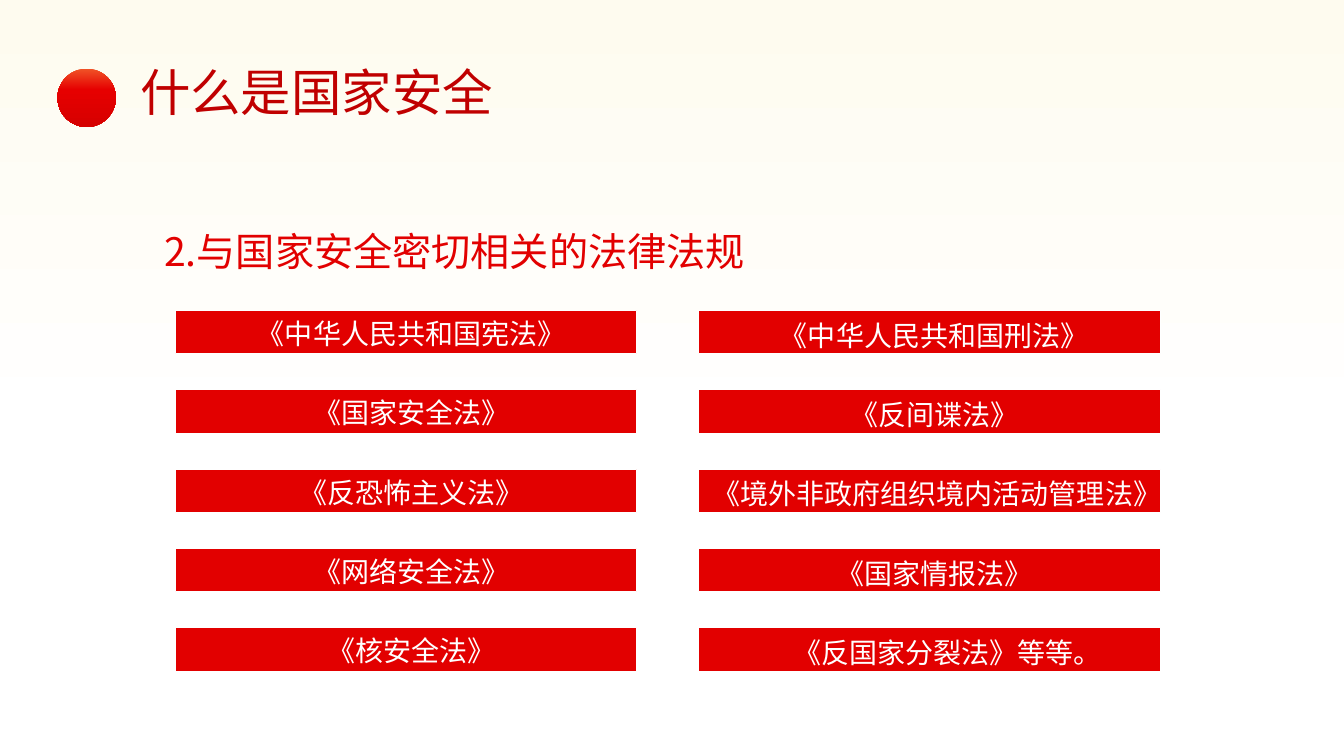
import copy

import pptx
import pptx.dml.color
import pptx.enum.shapes
import pptx.enum.text
import pptx.oxml
import pptx.oxml.ns
import pptx.util
from pptx.util import Cm, Pt

SHAPE = pptx.enum.shapes.MSO_SHAPE
ALIGN = pptx.enum.text.PP_ALIGN
qn = pptx.oxml.ns.qn


def rgb(value):
    return pptx.dml.color.RGBColor.from_string(value)


class Deck:
    font = "Noto Sans CJK SC"
    red, dark_red, white = "E20000", "C00000", "FFFFFF"

    def __init__(self):
        self.prs = pptx.Presentation()
        self.prs.slide_width, self.prs.slide_height = Cm(33.87), Cm(19.05)
        self.s = self.prs.slides.add_slide(self.prs.slide_layouts[6])

    def shape(self, kind, left, top, width, height):
        sp = self.s.shapes.add_shape(kind, Cm(left), Cm(top), Cm(width), Cm(height))
        sp.shadow.inherit = False
        return sp

    def gradient(self, kind, left, top, width, height, stops):
        """Shape shaded from top to bottom; stops are (position, colour)."""
        sp = self.shape(kind, left, top, width, height)
        sp.line.fill.background()
        sp.fill.gradient()
        sp.fill.gradient_angle = 270
        gs_list = sp._element.spPr.find(".//" + qn("a:gsLst"))
        while len(gs_list) < len(stops):
            gs_list.append(copy.deepcopy(gs_list[0]))
        for stop, (position, color) in zip(sp.fill.gradient_stops, stops):
            stop.position = position
            stop.color.rgb = rgb(color)

    def bar(self, left, top, width, height):
        sp = self.shape(SHAPE.RECTANGLE, left, top, width, height)
        sp.fill.solid()
        sp.fill.fore_color.rgb = rgb(self.red)
        sp.line.color.rgb = rgb(self.white)
        sp.line.width = Pt(0.5)

    def text(self, words, left, top, width, height, size, color,
             align=ALIGN.JUSTIFY, spacing=None, inset=(0.25, 0.13)):
        tb = self.s.shapes.add_textbox(Cm(left), Cm(top), Cm(width), Cm(height))
        tf = tb.text_frame
        tf.word_wrap = True
        tf.margin_left = tf.margin_right = Cm(inset[0])
        tf.margin_top = tf.margin_bottom = Cm(inset[1])
        p = tf.paragraphs[0]
        p.text = words
        p.alignment = align
        if spacing:
            p.line_spacing = Pt(spacing)
        p.font.size = Pt(size)
        p.font.color.rgb = rgb(color)
        p.font.name = self.font
        # East Asian typeface
        latin = p._p.find(".//" + qn("a:latin"))
        ea = pptx.oxml.parse_xml(
            f'<a:ea {pptx.oxml.ns.nsdecls("a")} typeface="{self.font}"/>')
        latin.addnext(ea)


# Bar columns: bar left, label top offset, rows of (law, label left, label width)
LABEL_WIDTH = 10.77
COLUMNS = [
    (4.42, -0.1, [
        ("《中华人民共和国宪法》", 4.98, LABEL_WIDTH),
        ("《国家安全法》", 4.98, LABEL_WIDTH),
        ("《反恐怖主义法》", 4.98, LABEL_WIDTH),
        ("《网络安全法》", 4.98, LABEL_WIDTH),
        ("《核安全法》", 4.98, LABEL_WIDTH),
    ]),
    (17.61, -0.06, [
        ("《中华人民共和国刑法》", 18.16, LABEL_WIDTH),
        ("《反间谍法》", 18.16, LABEL_WIDTH),
        ("《境外非政府组织境内活动管理法》", 17.63, 11.96),
        ("《国家情报法》", 18.16, LABEL_WIDTH),
        ("《反国家分裂法》等等。", 18.16, 11.43),
    ]),
]
FIRST_TOP, ROW_STEP = 7.82, 2


def main():
    deck = Deck()

    # Background and title
    deck.gradient(SHAPE.RECTANGLE, 0, 0, 33.87, 19.05,
                  [(0, "FEFBEF"), (0.57, "FFFFFF")])
    deck.text("什么是国家安全", 3.28, 1.4, 10.26, 1.8, 36, deck.dark_red)
    deck.gradient(SHAPE.OVAL, 1.45, 1.73, 1.47, 1.47,
                  [(0, "F05327"), (0.36, "E60000"), (1, "D60000")])

    # Section heading
    deck.text("2.与国家安全密切相关的法律法规", 3.89, 5.59, 15.54, 1.45, 28, deck.red)

    # Laws
    for bar_left, offset, laws in COLUMNS:
        for row, (law, left, width) in enumerate(laws):
            top = FIRST_TOP + row * ROW_STEP
            deck.bar(bar_left, top, 11.63, 1.09)
            deck.text(law, left, top + offset, width, 1.24, 20, deck.white,
                      ALIGN.CENTER, 27, (0.3, 0.15))

    deck.prs.save("out.pptx")


if __name__ == "__main__":
    main()
